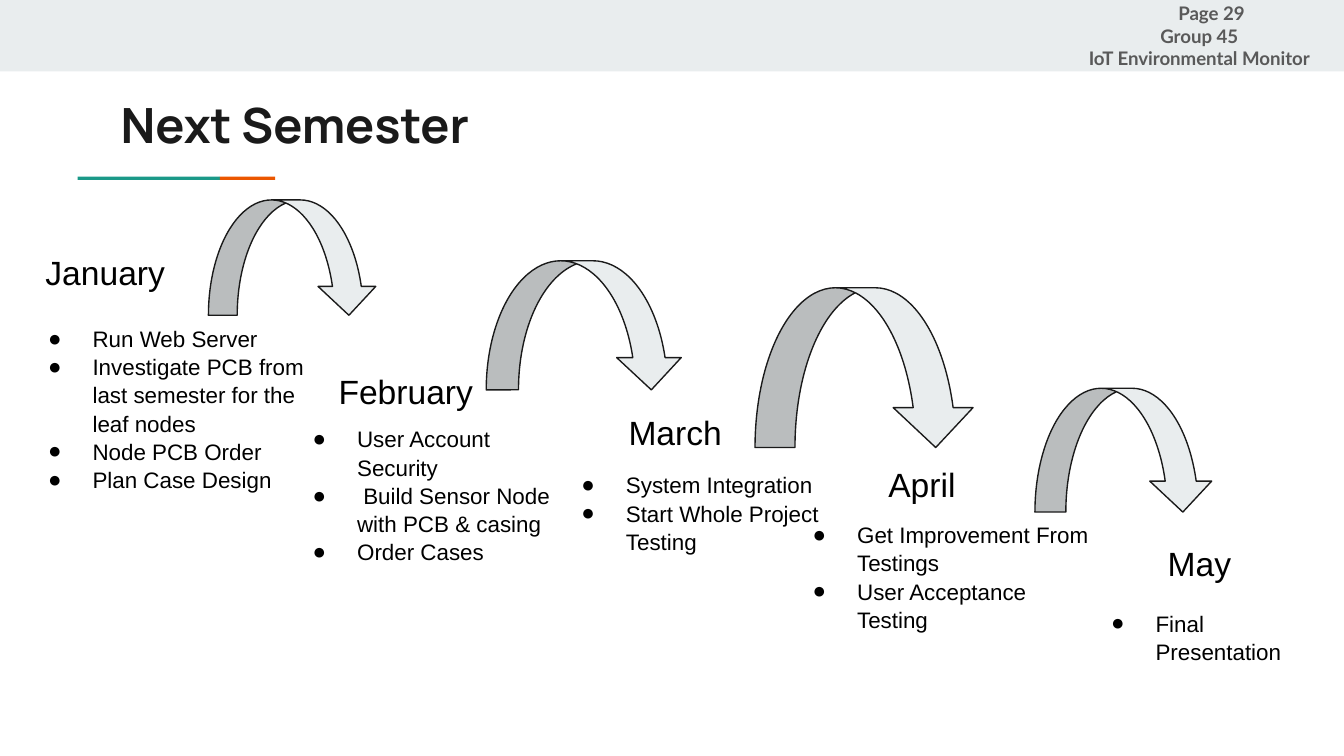
from lxml.etree import SubElement
from pptx import Presentation
from pptx.dml.color import RGBColor
from pptx.enum.shapes import MSO_SHAPE as Shape
from pptx.enum.text import MSO_ANCHOR as Anchor, MSO_AUTO_SIZE as AutoSize, PP_ALIGN as Align
from pptx.oxml.ns import qn
from pptx.util import Cm, Pt

COLORS = {"band": "E9EDEE", "ink": "1A1A1A", "text": "000000", "muted": "595959",
          "green": "1A9988", "orange": "EB5600"}
TITLE = {"name": "Manrope", "size": Pt(26), "bold": True}
PAGE = {"name": "Lato", "size": Pt(10), "bold": True}
MONTH = {"name": "Arial", "size": Pt(18), "bold": False}
TASK = {"name": "Arial", "size": Pt(12), "bold": False}
MARGIN = Cm(0.25)

# Month, heading box, list box, tasks (boxes in cm: left, top, width, height)
MONTHS = [
    ("January", (0.61, 4.47, 4.17, 1.37), (0.23, 5.87, 6.32, 3.71),
     ["Run Web Server", "Investigate PCB from last semester for the leaf nodes",
      "Node PCB Order", "Plan Case Design"]),
    ("February", (6.15, 6.73, 3.05, 1.22), (5.23, 7.77, 5.64, 3.58),
     ["User Account Security", " Build Sensor Node with PCB & casing", "Order Cases"]),
    ("March", (11.63, 7.49, 2.64, 1.63), (10.31, 8.64, 5.46, 1.63),
     ["System Integration", "Start Whole Project Testing"]),
    ("April", (16.54, 8.48, 1.9, 1.63), (14.68, 9.58, 6.32, 2.34),
     ["Get Improvement From Testings", "User Acceptance Testing"]),
    ("May", (21.82, 9.98, 2.64, 1.09), (20.32, 11.25, 4.95, 1.22),
     ["Final Presentation"]),
]
ARROWS = [(3.94, 3.78, 3.2, 2.18), (9.19, 4.93, 3.73, 2.44),
          (14.27, 5.44, 4.17, 3.02), (19.56, 7.34, 3.38, 2.34)]


def color(name):
    return RGBColor.from_string(COLORS[name])


def lengths(box):
    return [Cm(value) for value in box]


def set_frame(frame, anchor=Anchor.TOP):
    settings = {"word_wrap": True, "auto_size": AutoSize.NONE, "vertical_anchor": anchor,
                "margin_left": MARGIN, "margin_right": MARGIN,
                "margin_top": MARGIN, "margin_bottom": MARGIN}
    for name, value in settings.items():
        setattr(frame, name, value)


def set_font(paragraph, style, color_name):
    for name, value in style.items():
        setattr(paragraph.font, name, value)
    paragraph.font.color.rgb = color(color_name)


def add_bullet(paragraph):
    properties = paragraph._p.get_or_add_pPr()
    properties.set("marL", str(Cm(1.27)))
    properties.set("indent", str(-Cm(0.84)))
    bullet_color = SubElement(properties, qn("a:buClr"))
    SubElement(bullet_color, qn("a:srgbClr"), val=COLORS["text"])
    SubElement(properties, qn("a:buFont"), typeface="Arial")
    SubElement(properties, qn("a:buChar"), char="●")


def add_text(slide, box, lines, style, color_name="text", bulleted=False,
             spacing=1.05, anchor=Anchor.TOP):
    frame = slide.shapes.add_textbox(*lengths(box)).text_frame
    set_frame(frame, anchor)
    for index, line in enumerate(lines):
        paragraph = frame.paragraphs[0] if index == 0 else frame.add_paragraph()
        paragraph.text = line
        paragraph.line_spacing = spacing
        if bulleted:
            add_bullet(paragraph)
        set_font(paragraph, style, color_name)
    return frame


def add_filled(slide, kind, box, fill, line=None):
    shape = slide.shapes.add_shape(kind, *lengths(box))
    shape.shadow.inherit = False
    shape.fill.solid()
    shape.fill.fore_color.rgb = color(fill)
    if line:
        shape.line.color.rgb = color(line)
        shape.line.width = Pt(0.75)
    else:
        shape.line.fill.background()
    return shape


def add_header(slide, box):
    left, top, width, height = box
    add_filled(slide, Shape.RECTANGLE, box, "band")
    frame = add_text(slide, (left + width - 5.26, top + 0.13, 5.05, height - 0.26),
                     ["Page 29", "Group 45", "IoT Environmental Monitor"],
                     PAGE, "muted", spacing=1.0, anchor=Anchor.MIDDLE)
    page, *others = frame.paragraphs
    page._p.get_or_add_pPr().set("indent", str(Cm(1.88)))
    for paragraph in others:
        paragraph.alignment = Align.CENTER


def add_title(slide, box):
    title = slide.shapes.title
    title.left, title.top, title.width, title.height = lengths(box)
    title.text_frame.text = "Next Semester"
    set_frame(title.text_frame)
    paragraph = title.text_frame.paragraphs[0]
    paragraph.alignment = Align.LEFT
    set_font(paragraph, TITLE, "ink")


def add_rule(slide, box):
    left, top, width, height = box
    green_width = width * 0.72
    add_filled(slide, Shape.RECTANGLE, (left, top, green_width, height), "green")
    add_filled(slide, Shape.RECTANGLE,
               (left + green_width, top, width - green_width, height), "orange")


def add_month(slide, month, heading_box, list_box, tasks):
    add_text(slide, list_box, tasks, TASK, bulleted=True)
    add_text(slide, heading_box, [month], MONTH)


def main():
    presentation = Presentation()
    presentation.slide_width, presentation.slide_height = Cm(25.4), Cm(14.29)
    slide = presentation.slides.add_slide(presentation.slide_layouts[5])

    # Header, title and two-colour rule
    add_header(slide, (0, 0, 25.4, 1.35))
    add_title(slide, (2.03, 1.55, 21.36, 1.5))
    add_rule(slide, (1.47, 3.34, 3.73, 0.06))

    # Months stepping down the slide
    for month in MONTHS:
        add_month(slide, *month)

    # Arrows from each month to the next
    for box in ARROWS:
        arrow = add_filled(slide, Shape.CURVED_DOWN_ARROW, box, "band", "ink")
        for index, value in enumerate((0.25, 0.5, 0.25)):
            arrow.adjustments[index] = value

    presentation.save("out.pptx")


if __name__ == "__main__":
    main()
